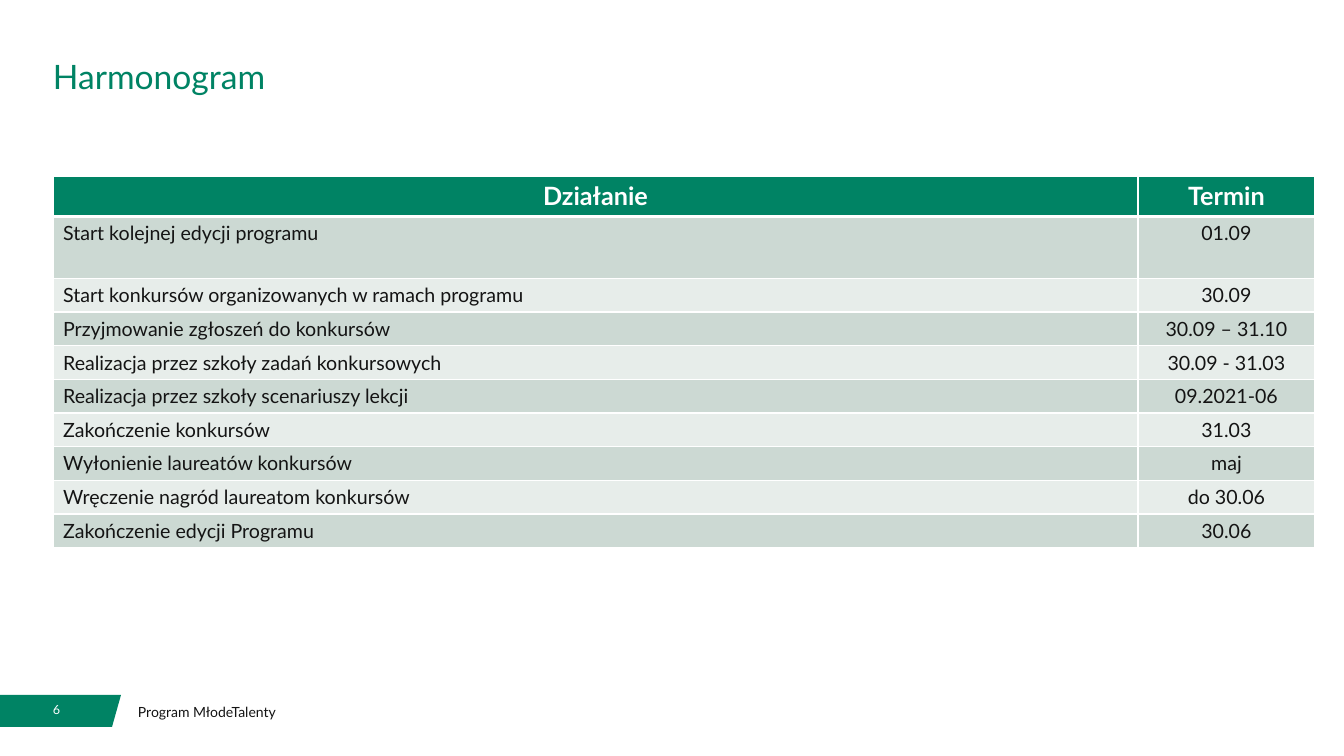
"""Build the programme schedule slide."""
import pptx
import pptx.util
import pptx.dml.color
import pptx.enum.text
import pptx.oxml
import pptx.oxml.ns

TITLE = "Harmonogram"
FOOT = "Program MłodeTalenty"
PAGE = "6"
ROWS = [
    ("Działanie", "Termin"),
    ("Start kolejnej edycji programu", "01.09"),
    ("Start konkursów organizowanych w ramach programu", "30.09"),
    ("Przyjmowanie zgłoszeń do konkursów", "30.09 – 31.10"),
    ("Realizacja przez szkoły zadań konkursowych", "30.09 - 31.03"),
    ("Realizacja przez szkoły scenariuszy lekcji", "09.2021-06"),
    ("Zakończenie konkursów", "31.03"),
    ("Wyłonienie laureatów konkursów", "maj"),
    ("Wręczenie nagród laureatom konkursów", "do 30.06"),
    ("Zakończenie edycji Programu", "30.06"),
]
COLS = [1085, 177]
HIGH = [40, 62] + [33] * (len(ROWS) - 2)
TAG = [(0, 695), (121, 695), (112, 727), (0, 727)]
THEME = {
    "font": "Lato", "green": "008364", "ink": "141414", "white": "FFFFFF",
    "bands": ["E7EDEA", "CCD9D3"],
    "title": 24, "head": 18, "cell": 14, "foot": 10, "page": 9,
}
SCALE = 914400 / 100.8
LEFT = pptx.enum.text.PP_ALIGN.LEFT
MID = pptx.enum.text.PP_ALIGN.CENTER


def px(num):
    return pptx.util.Emu(round(num * SCALE))


def tint(code):
    return pptx.dml.color.RGBColor.from_string(code)


def paint(fill, code):
    fill.solid()
    fill.fore_color.rgb = tint(code)


def write(para, text, size, code, bold=False):
    run = para.add_run()
    run.text = text
    font = run.font
    font.name, font.size, font.bold = THEME["font"], pptx.util.Pt(size), bold
    font.color.rgb = tint(code)


def label(slide, area, pads, text, size, code):
    frame = slide.shapes.add_textbox(*map(px, area)).text_frame
    frame.word_wrap = True
    (frame.margin_left, frame.margin_top,
     frame.margin_right, frame.margin_bottom) = map(px, pads)
    write(frame.paragraphs[0], text, size, code)
    return frame.paragraphs[0]


def edge(cell, side, wide):
    space = pptx.oxml.ns.nsdecls("a")
    cell._tc.get_or_add_tcPr().append(pptx.oxml.parse_xml(
        f'<a:ln{side} {space} w="{pptx.util.Pt(wide)}"><a:solidFill>'
        f'<a:srgbClr val="{THEME["white"]}"/></a:solidFill></a:ln{side}>'))


def draw_tag(slide):
    form = slide.shapes.build_freeform(*TAG[0], scale=SCALE)
    form.add_line_segments(TAG[1:], close=True)
    shape = form.convert_to_shape()
    shape.shadow.inherit = False
    paint(shape.fill, THEME["green"])
    shape.line.fill.background()


def draw_table(slide):
    area = (53, 176, sum(COLS), sum(HIGH))
    table = slide.shapes.add_table(
        len(ROWS), len(COLS), *map(px, area)).table
    for col, wide in zip(table.columns, COLS):
        col.width = px(wide)
    for i, (row, high) in enumerate(zip(ROWS, HIGH)):
        table.rows[i].height = px(high)
        head = i == 0
        back = THEME["green"] if head else THEME["bands"][i % 2]
        size = THEME["head" if head else "cell"]
        ink = THEME["white" if head else "ink"]
        for j, text in enumerate(row):
            cell = table.cell(i, j)
            for side in "LRTB":
                thick = (i, side) in ((0, "B"), (1, "T"))
                edge(cell, side, 3 if thick else 1)
            paint(cell.fill, back)
            para = cell.text_frame.paragraphs[0]
            para.alignment = MID if head or j else LEFT
            write(para, text, size, ink, head)


def main():
    deck = pptx.Presentation()
    deck.slide_width, deck.slide_height = px(1344), px(756)
    slide = deck.slides.add_slide(deck.slide_layouts[6])
    draw_tag(slide)
    label(slide, (43, 697, 35, 40), (10, 5, 10, 5),
          PAGE, THEME["page"], THEME["white"])
    label(slide, (138, 699, 647, 27), (0, 5, 10, 5),
          FOOT, THEME["foot"], THEME["ink"])
    para = label(slide, (53, 48, 1238, 52), (0, 0, 0, 0),
                 TITLE, THEME["title"], THEME["green"])
    para.line_spacing = 1.2
    draw_table(slide)
    deck.save("out.pptx")


if __name__ == "__main__":
    main()
